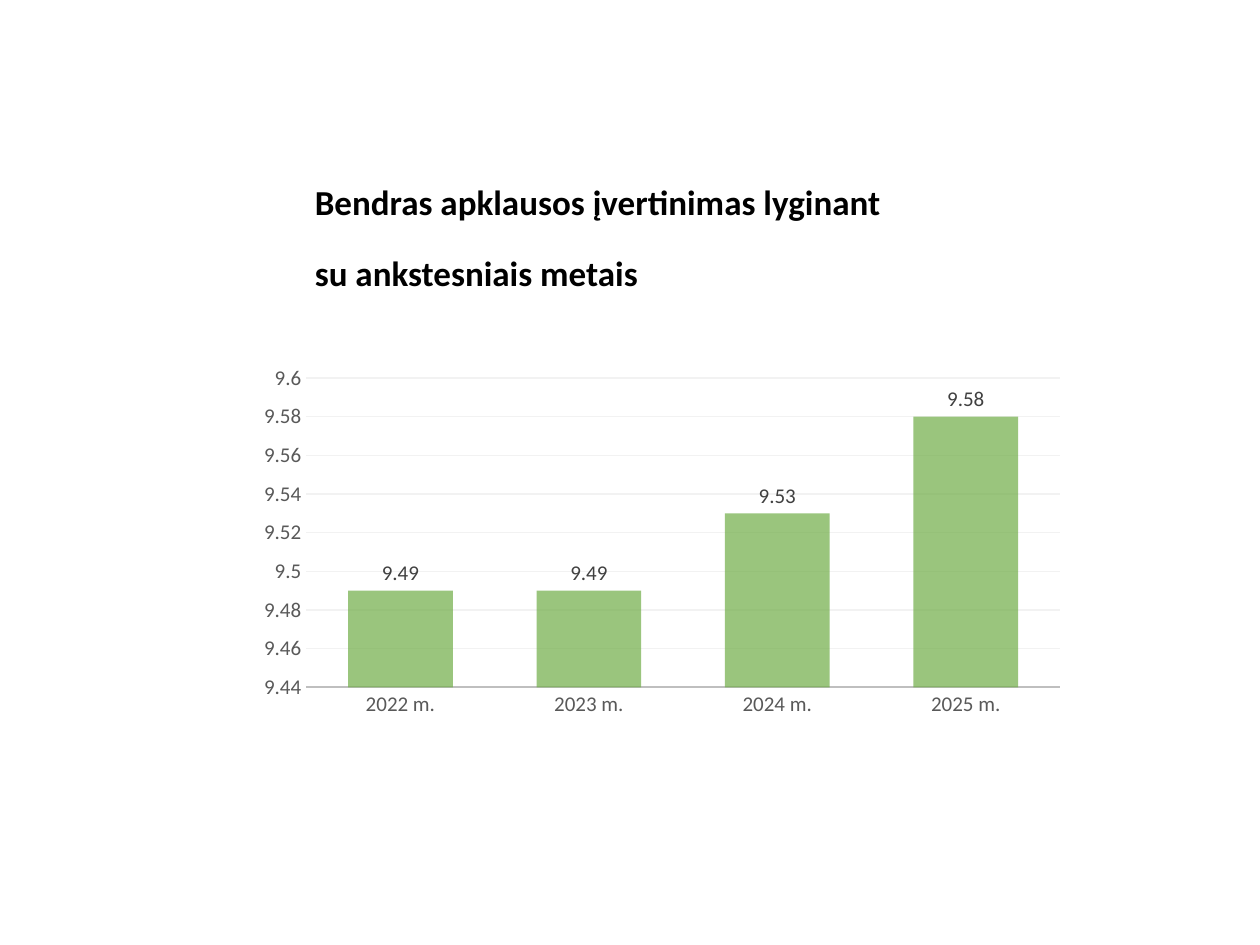
import pptx
import pptx.chart.data
import pptx.dml.color
import pptx.enum.chart
import pptx.enum.text
import pptx.oxml
import pptx.oxml.ns
import pptx.util
from pptx.util import Pt

COLORS = {
    "title": "000000",
    "bar": "70AD47",
    "label": "404040",
    "axis_text": "595959",
    "axis_line": "BFBFBF",
    "grid": "F2F2F2",
}
FONT = "Calibri"
RATINGS = {"2022 m.": 9.49, "2023 m.": 9.49, "2024 m.": 9.53, "2025 m.": 9.58}
PLOT_AREA = {"x": 0.147, "y": 0.052, "w": 0.822, "h": 0.797}


def rgb(name):
    """Return the named colour."""
    return pptx.dml.color.RGBColor.from_string(COLORS[name])


def set_font(font, size, color, bold=False):
    """Apply the slide's typeface with a size, colour and weight."""
    font.name = FONT
    font.size = Pt(size)
    font.bold = bold
    font.color.rgb = rgb(color)


def set_line(line, color, width):
    """Colour a line and set its width."""
    line.color.rgb = rgb(color)
    line.width = Pt(width)


def add_text(slide, text, *, left, top, width, height, size, color, bold, spacing):
    """Add a vertically centred text box with fixed line spacing."""
    shape = slide.shapes.add_textbox(Pt(left), Pt(top), Pt(width), Pt(height))
    frame = shape.text_frame
    frame.word_wrap = True
    frame.vertical_anchor = pptx.enum.text.MSO_ANCHOR.MIDDLE
    paragraph = frame.paragraphs[0]
    paragraph.text = text
    paragraph.line_spacing = Pt(spacing)
    for run in paragraph.runs:
        set_font(run.font, size, color, bold)


def set_plot_area(chart):
    """Place the inner plot area by fractions of the chart frame."""
    modes = "".join(f'<c:{side}Mode val="edge"/>' for side in "xy")
    sizes = "".join(f'<c:{key} val="{value}"/>' for key, value in PLOT_AREA.items())
    layout = pptx.oxml.parse_xml(
        f'<c:layout {pptx.oxml.ns.nsdecls("c")}><c:manualLayout>'
        f'<c:layoutTarget val="inner"/>{modes}{sizes}</c:manualLayout></c:layout>'
    )
    plot_area = chart.plots[0]._element.getparent()
    for old_layout in plot_area.findall(pptx.oxml.ns.qn("c:layout")):
        plot_area.remove(old_layout)
    plot_area.insert(0, layout)


def style_axes(chart):
    """Format the category axis, value axis and gridlines."""
    for axis in (chart.category_axis, chart.value_axis):
        axis.major_tick_mark = pptx.enum.chart.XL_TICK_MARK.NONE
        axis.minor_tick_mark = pptx.enum.chart.XL_TICK_MARK.NONE
        set_font(axis.tick_labels.font, 12, "axis_text")
    set_line(chart.category_axis.format.line, "axis_line", 1.25)
    value_axis = chart.value_axis
    value_axis.minimum_scale = 9.44
    value_axis.maximum_scale = 9.6
    value_axis.major_unit = 0.02
    value_axis.format.line.fill.background()
    value_axis.has_major_gridlines = True
    set_line(value_axis.major_gridlines.format.line, "grid", 0.75)


def style_bars(plot):
    """Format the translucent bars and their value labels."""
    plot.gap_width = 80
    plot.overlap = 25
    plot.vary_by_categories = False
    series = plot.series[0]
    series.invert_if_negative = False
    fill = series.format.fill
    fill.solid()
    fill.fore_color.rgb = rgb("bar")
    color = next(series._element.iter(pptx.oxml.ns.qn("a:srgbClr")))
    color.append(
        pptx.oxml.parse_xml(f'<a:alpha {pptx.oxml.ns.nsdecls("a")} val="70000"/>')
    )
    labels = series.data_labels
    labels.show_value = True
    labels.position = pptx.enum.chart.XL_LABEL_POSITION.OUTSIDE_END
    set_font(labels.font, 12, "label")


def add_ratings_chart(slide, left, top, width, height):
    """Add the column chart of yearly ratings."""
    data = pptx.chart.data.CategoryChartData()
    data.categories = list(RATINGS)
    data.add_series("Series 1", list(RATINGS.values()))
    chart = slide.shapes.add_chart(
        pptx.enum.chart.XL_CHART_TYPE.COLUMN_CLUSTERED,
        Pt(left), Pt(top), Pt(width), Pt(height), data,
    ).chart
    chart.has_title = False
    chart.has_legend = False
    set_font(chart.font, 10, "title")
    style_axes(chart)
    style_bars(chart.plots[0])
    set_plot_area(chart)


def main():
    """Build and save the slide."""
    presentation = pptx.Presentation()
    presentation.slide_width = Pt(720)
    presentation.slide_height = Pt(540)
    slide = presentation.slides.add_slide(presentation.slide_layouts[6])
    add_text(
        slide, "Bendras apklausos įvertinimas lyginant \vsu ankstesniais metais",
        left=172.8, top=82, width=458, height=90,
        size=20, color="title", bold=True, spacing=40.5,
    )
    add_ratings_chart(slide, left=98, top=204.5, width=524, height=221.8)
    presentation.save("out.pptx")


if __name__ == "__main__":
    main()
